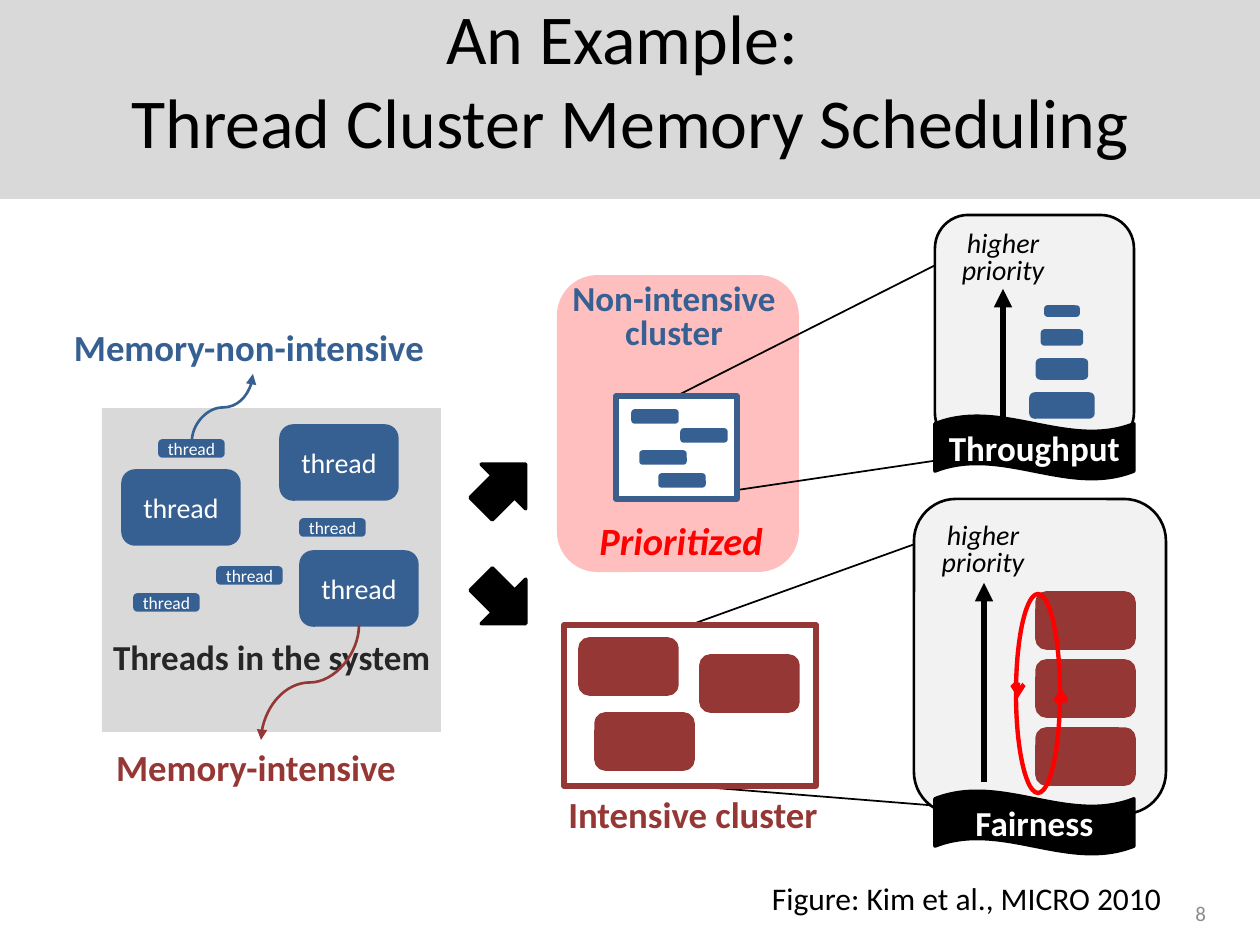
import pptx
import pptx.util
import pptx.dml.color
import pptx.enum.shapes
import pptx.enum.text
import pptx.oxml.ns
from lxml import etree

SHAPES = pptx.enum.shapes.MSO_SHAPE
CONNECTORS = pptx.enum.shapes.MSO_CONNECTOR
ALIGN = pptx.enum.text.PP_ALIGN
ANCHOR = pptx.enum.text.MSO_ANCHOR
EMU_PER_PX = 914400 / 126

COLORS = {
    "black": "000000", "white": "FFFFFF", "red": "FF0000", "gray": "D9D9D9",
    "panel": "F2F2F2", "charcoal": "262626", "number": "8C8C8C",
    "blue": "376092", "frame_blue": "3A5F8C", "maroon": "953735",
}

# Left, top in px
SMALL_THREADS = [(218, 568), (160, 441), (301, 520), (135, 595)]
BIG_THREADS = [(123, 471), (301, 552), (281, 426)]
LIGHT_BARS = [(633, 411), (641, 452), (682, 430), (660, 475)]
HEAVY_BLOCKS = [(580, 639), (701, 656), (596, 714)]
RANKED_BARS = [(307, 32, 8), (331, 39, 13), (360, 49, 18), (394, 62, 23)]  # top, width, height
RANKED_CENTER = 1062
SHUFFLED_LEFT, SHUFFLED_TOP, SHUFFLED_STEP = 1037, 593, 68
SMALL_SIZE, BIG_SIZE = (63, 15), (116, 73)
BAR_SIZE, BLOCK_SIZE = (44, 11), (97, 55)

BOLD = {"bold": True}
ITALIC = {"italic": True}
TIGHT = {"line_spacing": 0.8}
# Box, paragraphs, size, colour, font format, paragraph format, left/right and top/bottom insets
CLUSTER_LABELS = [
    ((564, 285, 220, 69), ["Non-intensive", "cluster"], 20, "blue", BOLD, TIGHT, (0, 0)),
    ((546, 800, 294, 72), ["Intensive cluster"], 21, "maroon", BOLD, TIGHT, (0, 0)),
    ((567, 520, 228, 50), ["Prioritized"], 22, "red", {**BOLD, **ITALIC}, TIGHT, (13, 6)),
]
THREAD_LABELS = [
    ((113, 635, 347, 43), ["Threads in the system"], 20, "charcoal", BOLD,
     {"alignment": ALIGN.LEFT}, (0, 0)),
    ((11, 325, 476, 44), ["Memory-non-intensive"], 21, "blue", BOLD, {}, (0, 0)),
    ((79, 745, 354, 50), ["Memory-intensive"], 21, "maroon", BOLD, {}, (0, 0)),
]
PRIORITY_LABELS = [
    (box, ["higher", "priority"], 16, "black", ITALIC, TIGHT, (0, 6))
    for box in [(949, 226, 108, 67), (929, 518, 108, 67)]
]
PAGE_LABELS = [
    ((759, 873, 466, 50), ["Figure: Kim et al., MICRO 2010"], 18, "black", {},
     {"alignment": ALIGN.LEFT}, (13, 6)),
]
TITLE = ((0, 0, 1260, 157), ["An Example: \vThread Cluster Memory Scheduling"],
         40, "black", {}, {}, (13, 6))
SLIDE_NUMBER = ((1080, 882, 139, 63), ["8"], 12, "number", {},
                {"alignment": ALIGN.RIGHT}, (13, 6))


def px(value):
    return pptx.util.Emu(round(value * EMU_PER_PX))


def rgb(name):
    return pptx.dml.color.RGBColor.from_string(COLORS[name])


def set_attributes(target, values):
    for name, value in values.items():
        setattr(target, name, value)


def write(shape, lines, size, color, font=None, layout=None, insets=(13, 6),
          anchor=ANCHOR.MIDDLE):
    side, edge = map(px, insets)
    frame = shape.text_frame
    set_attributes(frame, {
        "word_wrap": True, "vertical_anchor": anchor,
        "margin_left": side, "margin_right": side,
        "margin_top": edge, "margin_bottom": edge,
    })
    for index, line in enumerate(lines):
        paragraph = frame.paragraphs[0] if index == 0 else frame.add_paragraph()
        paragraph.text = line
        set_attributes(paragraph, {"alignment": ALIGN.CENTER, **(layout or {})})
        for run in paragraph.runs:
            set_attributes(run.font, {"name": "Calibri", "size": pptx.util.Pt(size),
                                      **(font or {})})
            run.font.color.rgb = rgb(color)


def add_label(slide, box, lines, size, color, font, layout, insets, anchor=ANCHOR.TOP):
    label = slide.shapes.add_textbox(*map(px, box))
    write(label, lines, size, color, font, layout, insets, anchor)


def add_shape(slide, kind, box, fill=None, line=None, width=2):
    shape = slide.shapes.add_shape(kind, *map(px, box))
    shape.shadow.inherit = False
    if fill:
        shape.fill.solid()
        shape.fill.fore_color.rgb = rgb(fill)
    else:
        shape.fill.background()
    if line:
        shape.line.color.rgb = rgb(line)
        shape.line.width = pptx.util.Pt(width)
    else:
        shape.line.fill.background()
    return shape


def add_rounded(slide, box, color):
    return add_shape(slide, SHAPES.ROUNDED_RECTANGLE, box, color, color)


def add_line(slide, start, end, color, width, arrow=None, kind=CONNECTORS.STRAIGHT):
    connector = slide.shapes.add_connector(kind, *map(px, (*start, *end)))
    connector.line.color.rgb = rgb(color)
    connector.line.width = pptx.util.Pt(width)
    if arrow:
        etree.SubElement(connector.line._get_or_add_ln(), pptx.oxml.ns.qn("a:tailEnd"), type=arrow)
    etree.SubElement(connector._element.spPr, pptx.oxml.ns.qn("a:effectLst"))
    return connector


def add_upright_curve(slide, start, end, color):
    """Add a curve that leaves and arrives vertically: a level curve turned by 90 degrees."""
    (x1, y1), (x2, y2) = start, end
    center_x, center_y = (x1 + x2) / 2, (y1 + y2) / 2
    half_x, half_y = (x2 - x1) / 2, (y2 - y1) / 2
    curve = add_line(slide, (center_x - half_y, center_y + half_x),
                     (center_x + half_y, center_y - half_x),
                     color, 1.5, "triangle", CONNECTORS.CURVE)
    curve._element.spPr.find(pptx.oxml.ns.qn("a:xfrm")).set("rot", "5400000")


def add_threads_system(slide):
    add_shape(slide, SHAPES.RECTANGLE, (102, 408, 339, 324), "gray")
    for positions, size, points in [(SMALL_THREADS, SMALL_SIZE, 10), (BIG_THREADS, BIG_SIZE, 16)]:
        for position in positions:
            thread = add_rounded(slide, (*position, *size), "blue")
            write(thread, ["thread"], points, "white", insets=(0, 6))
    for label in THREAD_LABELS:
        add_label(slide, *label)
    add_upright_curve(slide, (192, 441), (253, 374), "blue")
    add_upright_curve(slide, (359, 625), (261, 740), "maroon")
    for top, angle in [(455, 315), (570, 45)]:
        arrow = add_shape(slide, SHAPES.RIGHT_ARROW, (472, top, 63, 63), "black", "black")
        arrow.rotation = angle


def add_clusters_and_panels(slide):
    highlight = add_shape(slide, SHAPES.ROUNDED_RECTANGLE, (557, 275, 242, 297), "red")
    color = highlight.fill._xPr.find(".//" + pptx.oxml.ns.qn("a:srgbClr"))
    etree.SubElement(color, pptx.oxml.ns.qn("a:alpha"), val="25000")

    # Zoom lines lie behind the frames and panels that they join
    zoom_lines = [add_line(slide, (0, 0), (1, 1), "black", 1) for _ in range(4)]
    light_frame = add_shape(slide, SHAPES.RECTANGLE, (616, 396, 121, 103),
                            "white", "frame_blue", 3)
    heavy_frame = add_shape(slide, SHAPES.RECTANGLE, (564, 625, 252, 161), None, "maroon", 3)
    throughput, fairness = [
        add_shape(slide, SHAPES.ROUNDED_RECTANGLE, box, "panel", "black", 1.5)
        for box in [(935, 215, 199, 231), (914, 499, 252, 315)]
    ]
    ends = [(panel, frame, side) for panel, frame in
            [(throughput, light_frame), (fairness, heavy_frame)] for side in (0, 2)]
    for zoom_line, (panel, frame, side) in zip(zoom_lines, ends):
        zoom_line.begin_connect(panel, side)
        zoom_line.end_connect(frame, side)

    for position in LIGHT_BARS:
        add_rounded(slide, (*position, *BAR_SIZE), "blue")
    for top, width, height in RANKED_BARS:
        add_rounded(slide, (RANKED_CENTER - width / 2, top, width, height), "blue")
    shuffled = [(SHUFFLED_LEFT, SHUFFLED_TOP + SHUFFLED_STEP * row) for row in range(3)]
    for position in HEAVY_BLOCKS + shuffled:
        add_rounded(slide, (*position, *BLOCK_SIZE), "maroon")
    for label in CLUSTER_LABELS + PRIORITY_LABELS:
        add_label(slide, *label)

    for x, bottom, top in [(1003, 426, 289), (984, 782, 583)]:
        add_line(slide, (x, bottom), (x, top), "black", 3.5, "triangle")
    add_shape(slide, SHAPES.OVAL, (1016, 594, 44, 199), None, "red", 2.5)
    for x, start, end in [(1018, 688, 698), (1061, 698, 688)]:
        add_line(slide, (x, start), (x, end), "red", 2.5, "arrow")
    for name, top in [("Throughput", 416), ("Fairness", 791)]:
        banner = add_shape(slide, SHAPES.WAVE, (935, top, 199, 63), "black", "black")
        write(banner, [name], 20, "white", BOLD)


def main():
    presentation = pptx.Presentation()
    presentation.slide_width, presentation.slide_height = px(1260), px(945)
    slide = presentation.slides.add_slide(presentation.slide_layouts[6])
    add_shape(slide, SHAPES.RECTANGLE, (0, 0, 1260, 199), "gray")
    add_clusters_and_panels(slide)
    add_threads_system(slide)
    for label in PAGE_LABELS:
        add_label(slide, *label)
    for label in (TITLE, SLIDE_NUMBER):
        add_label(slide, *label, anchor=ANCHOR.MIDDLE)
    presentation.save("out.pptx")


if __name__ == "__main__":
    main()
